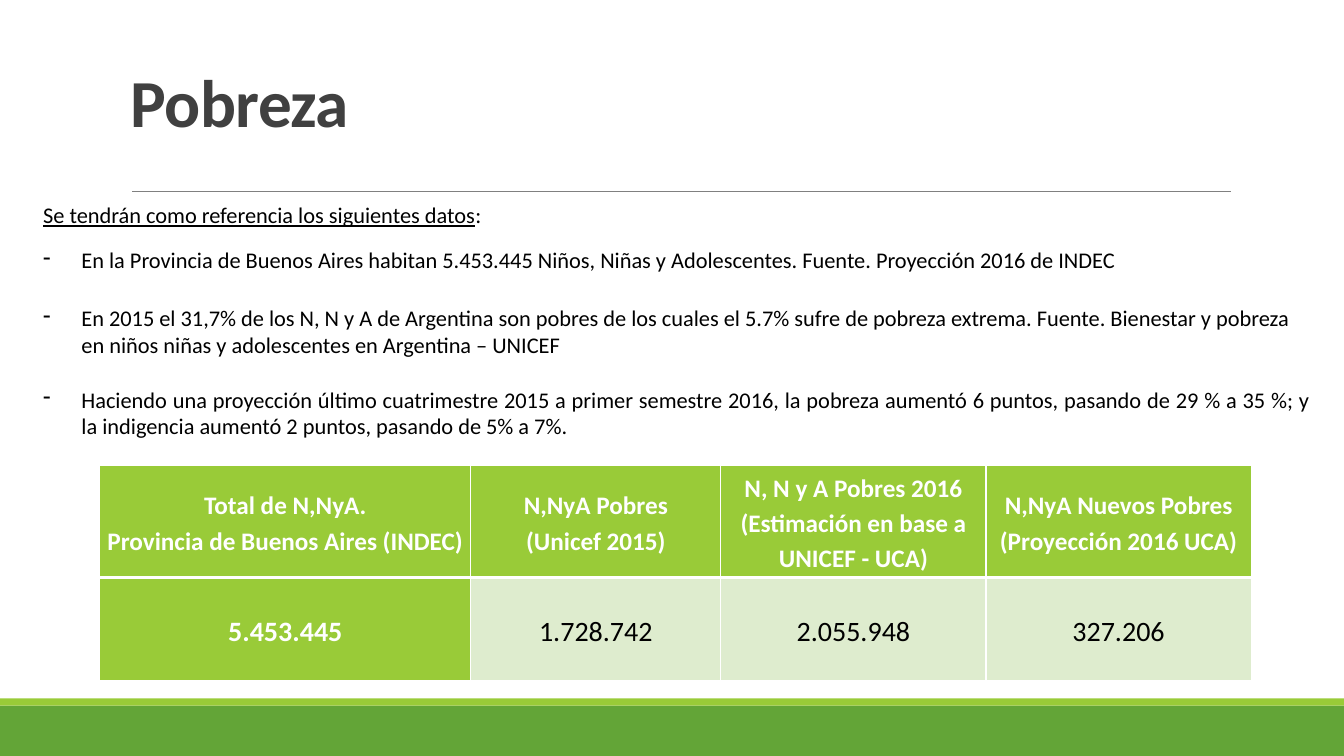
from lxml import etree
from pptx import Presentation
from pptx.dml.color import RGBColor
from pptx.enum.shapes import MSO_CONNECTOR as Connector, MSO_SHAPE as Shape
from pptx.enum.text import MSO_ANCHOR as Anchor, PP_ALIGN as Align
from pptx.oxml import parse_xml
from pptx.oxml.ns import nsdecls, qn
from pptx.util import Inches, Pt

# Content
TITLE = "Pobreza"
INTRO = "Se tendrán como referencia los siguientes datos"
FACTS = [  # text, alignment, line spacing, space before in points
    ("En la Provincia de Buenos Aires habitan 5.453.445 Niños, Niñas y Adolescentes. "
     "Fuente. Proyección 2016 de INDEC", Align.JUSTIFY, 1.15, 0),
    ("En 2015 el 31,7% de los N, N y A de Argentina son pobres de los cuales el 5.7% "
     "sufre de pobreza extrema. Fuente. Bienestar y pobreza en niños niñas y "
     "adolescentes en Argentina – UNICEF", Align.LEFT, 1, 22.4),
    ("Haciendo una proyección último cuatrimestre 2015 a primer semestre 2016, la "
     "pobreza aumentó 6 puntos, pasando de 29 % a 35 %; y la indigencia aumentó "
     "2 puntos, pasando de 5% a 7%.", Align.JUSTIFY, 1, 19.5),
]
COLUMNS = [  # header lines, value, width
    (["Total de N,NyA.", "Provincia de Buenos Aires (INDEC)"], "5.453.445", 3.68),
    (["N,NyA Pobres", "(Unicef 2015)"], "1.728.742", 2.48),
    (["N, N y A Pobres 2016", "(Estimación en base a UNICEF - UCA)"], "2.055.948", 2.63),
    (["N,NyA Nuevos Pobres (Proyección 2016 UCA)"], "327.206", 2.63),
]
ROW_HEIGHTS = [1.11, 1.02]
BANDS = [(7, 0.5, "63A537"), (6.93, 0.07, "99CB38")]  # top, height, colour

# Formats
WHITE, BLACK, LIME, PALE = "FFFFFF", "000000", "99CB38", "DEECCE"
TITLE_FONT = {"name": "Calibri", "size": Pt(48), "bold": True}
BODY_FONT = {"name": "Calibri", "size": Pt(16)}
HEADER_FONT = {"name": "Calibri", "size": Pt(18), "bold": True}
VALUE_FONT = {"name": "Calibri", "size": Pt(20)}
CELL = {"vertical_anchor": Anchor.MIDDLE, "margin_left": Inches(0.05),
        "margin_right": Inches(0.05), "margin_top": 0, "margin_bottom": 0}


def rgb(color):
    return RGBColor.from_string(color)


def apply(target, formats):
    for name, value in formats.items():
        setattr(target, name, value)


def add_run(paragraph, text, formats, color):
    run = paragraph.add_run()
    run.text = text
    apply(run.font, formats)
    run.font.color.rgb = rgb(color)
    return run


def add_text_frame(slide, left, top, width, height, anchor):
    frame = slide.shapes.add_textbox(*map(Inches, (left, top, width, height))).text_frame
    apply(frame, {"word_wrap": True, "vertical_anchor": anchor})
    return frame


def add_dash(paragraph, indent):
    properties = paragraph._p.get_or_add_pPr()
    properties.set("marL", str(Inches(indent)))
    properties.set("indent", str(-Inches(indent)))
    etree.SubElement(properties, qn("a:buChar")).set("char", "-")


def set_borders(cell, widths):
    properties = cell._tc.get_or_add_tcPr()
    for position, (side, width) in enumerate(widths.items()):
        properties.insert(position, parse_xml(
            f'<a:ln{side} {nsdecls("a")} w="{Pt(width)}"><a:solidFill>'
            f'<a:srgbClr val="{WHITE}"/></a:solidFill></a:ln{side}>'))


def fill_cell(cell, lines, fill, formats, color, borders):
    apply(cell, CELL)
    cell.fill.solid()
    cell.fill.fore_color.rgb = rgb(fill)
    for index, line in enumerate(lines):
        frame = cell.text_frame
        paragraph = frame.add_paragraph() if index else frame.paragraphs[0]
        apply(paragraph, {"alignment": Align.CENTER, "line_spacing": 1.15})
        add_run(paragraph, line, formats, color)
    set_borders(cell, borders)


def add_background(slide):
    for top, height, color in BANDS:
        band = slide.shapes.add_shape(Shape.RECTANGLE, 0, Inches(top),
                                      Inches(13.33), Inches(height))
        band.shadow.inherit = False
        band.fill.solid()
        band.fill.fore_color.rgb = rgb(color)
        band.line.fill.background()
    rule = slide.shapes.add_connector(Connector.STRAIGHT, Inches(1.31), Inches(1.9),
                                      Inches(12.21), Inches(1.9))
    rule.line.color.rgb = rgb("808080")
    rule.line.width = Pt(0.5)
    etree.SubElement(rule._element.spPr, qn("a:effectLst"))


def add_title(slide):
    heading = add_text_frame(slide, 1.2, 0.31, 11, 1.14, Anchor.BOTTOM).paragraphs[0]
    heading.line_spacing = 0.85
    run = add_run(heading, TITLE, TITLE_FONT, "404040")
    run.font._element.set("spc", "-50")


def add_facts(slide):
    frame = add_text_frame(slide, 0.33, 1.91, 12.77, 2.52, Anchor.TOP)
    intro = frame.paragraphs[0]
    apply(intro, {"alignment": Align.JUSTIFY, "line_spacing": 1.15, "space_after": Pt(10)})
    add_run(intro, INTRO, BODY_FONT | {"underline": True}, BLACK)
    add_run(intro, ":", BODY_FONT, BLACK)
    for text, alignment, spacing, before in FACTS:
        fact = frame.add_paragraph()
        apply(fact, {"alignment": alignment, "line_spacing": spacing,
                     "space_before": Pt(before)})
        add_dash(fact, 0.38)
        add_run(fact, text, BODY_FONT, BLACK)


def add_poverty_table(slide):
    width = sum(column[2] for column in COLUMNS)
    table = slide.shapes.add_table(2, len(COLUMNS), Inches(0.99), Inches(4.62),
                                   Inches(width), Inches(sum(ROW_HEIGHTS))).table
    for row, height in zip(table.rows, ROW_HEIGHTS):
        row.height = Inches(height)
    for index, (header, value, column_width) in enumerate(COLUMNS):
        table.columns[index].width = Inches(column_width)
        fill_cell(table.cell(0, index), header, LIME, HEADER_FONT, WHITE,
                  {"L": 1, "R": 1, "T": 1, "B": 3})
        is_total = index == 0
        fill_cell(table.cell(1, index), [value], LIME if is_total else PALE,
                  VALUE_FONT | {"bold": is_total}, WHITE if is_total else BLACK,
                  {"L": 1, "R": 1, "T": 3, "B": 1})


def main():
    deck = Presentation()
    deck.slide_width, deck.slide_height = Inches(13.33), Inches(7.5)
    slide = deck.slides.add_slide(deck.slide_layouts[6])
    add_background(slide)
    add_title(slide)
    add_poverty_table(slide)
    add_facts(slide)
    deck.save("out.pptx")


if __name__ == "__main__":
    main()
